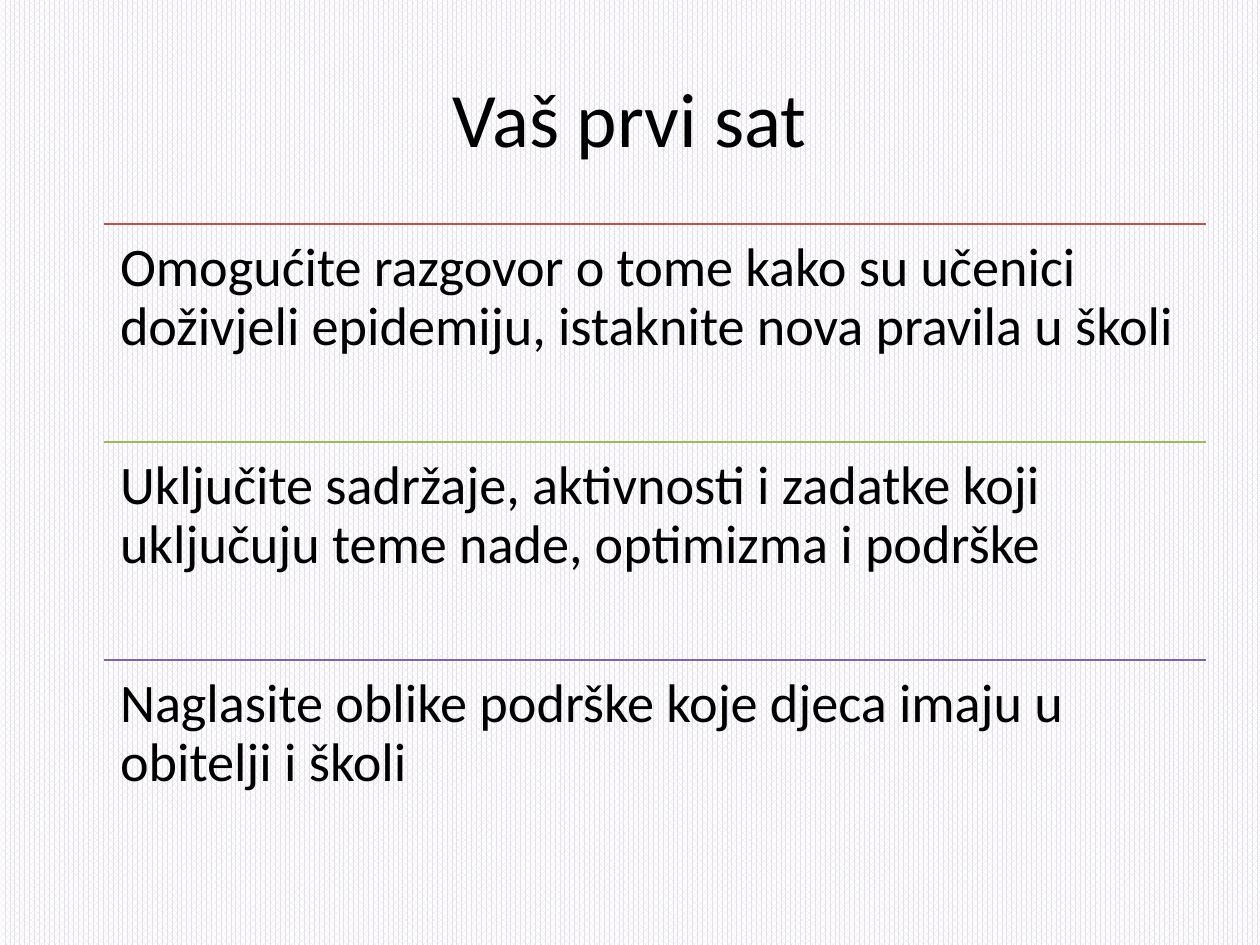
from pptx import Presentation
from pptx.dml.color import RGBColor
from pptx.enum.dml import MSO_PATTERN
from pptx.enum.shapes import MSO_CONNECTOR
from pptx.enum.text import MSO_ANCHOR, PP_ALIGN
from pptx.oxml.ns import qn
from pptx.util import Pt
from lxml.etree import SubElement

BLACK = RGBColor(0x00, 0x00, 0x00)
WHITE = RGBColor(0xFF, 0xFF, 0xFF)
LAVENDER = RGBColor(0xE6, 0xE0, 0xEC)
RED = RGBColor(0xC0, 0x50, 0x4D)
GREEN = RGBColor(0x9B, 0xBB, 0x59)
PURPLE = RGBColor(0x80, 0x64, 0xA2)

TITLE = "Vaš prvi sat"
STEPS = [
    (RED, "Omogućite razgovor o tome kako su učenici doživjeli epidemiju, "
          "istaknite nova pravila u školi"),
    (GREEN, "Uključite sadržaje, aktivnosti i zadatke koji uključuju teme nade, "
            "optimizma i podrške"),
    (PURPLE, "Naglasite oblike podrške koje djeca imaju u obitelji i školi"),
]

# Layout in px, 126 to the inch
FONT = "Calibri"
SLIDE_WIDTH, SLIDE_HEIGHT = 1260, 945
TITLE_BOX = (63, 38, 1134, 157)
STEP_LEFT, STEP_TOP, STEP_WIDTH, STEP_HEIGHT = 104, 224, 1102, 218
STEP_INSET = 16


def px(value):
    return round(value * 914400 / 126)


def add_text(slide, box, text, size):
    shape = slide.shapes.add_textbox(*map(px, box))
    frame = shape.text_frame
    frame.word_wrap = True
    paragraph = frame.paragraphs[0]
    paragraph.text = text
    paragraph.font.name = FONT
    paragraph.font.size = Pt(size)
    paragraph.font.color.rgb = BLACK
    return frame, paragraph


def add_rule(slide, top, color):
    line = slide.shapes.add_connector(
        MSO_CONNECTOR.STRAIGHT, px(STEP_LEFT), px(top),
        px(STEP_LEFT + STEP_WIDTH), px(top))
    line.line.color.rgb = color
    line.line.width = Pt(0.75)
    SubElement(line._element.spPr, qn("a:effectLst"))


def main():
    presentation = Presentation()
    presentation.slide_width = px(SLIDE_WIDTH)
    presentation.slide_height = px(SLIDE_HEIGHT)
    slide = presentation.slides.add_slide(presentation.slide_layouts[6])

    # Patterned background
    fill = slide.background.fill
    fill.patterned()
    fill.pattern = MSO_PATTERN.PERCENT_75
    fill.fore_color.rgb = LAVENDER
    fill.back_color.rgb = WHITE

    # Title
    frame, paragraph = add_text(slide, TITLE_BOX, TITLE, 44)
    frame.vertical_anchor = MSO_ANCHOR.MIDDLE
    paragraph.alignment = PP_ALIGN.CENTER

    # Steps, each under a coloured rule
    for index, (color, text) in enumerate(STEPS):
        top = STEP_TOP + index * STEP_HEIGHT
        add_rule(slide, top, color)
        box = (STEP_LEFT, top, STEP_WIDTH, STEP_HEIGHT)
        frame, paragraph = add_text(slide, box, text, 31)
        frame.margin_left = frame.margin_right = px(STEP_INSET)
        frame.margin_top = frame.margin_bottom = px(STEP_INSET)
        paragraph.line_spacing = 0.9

    presentation.save("out.pptx")


if __name__ == "__main__":
    main()
